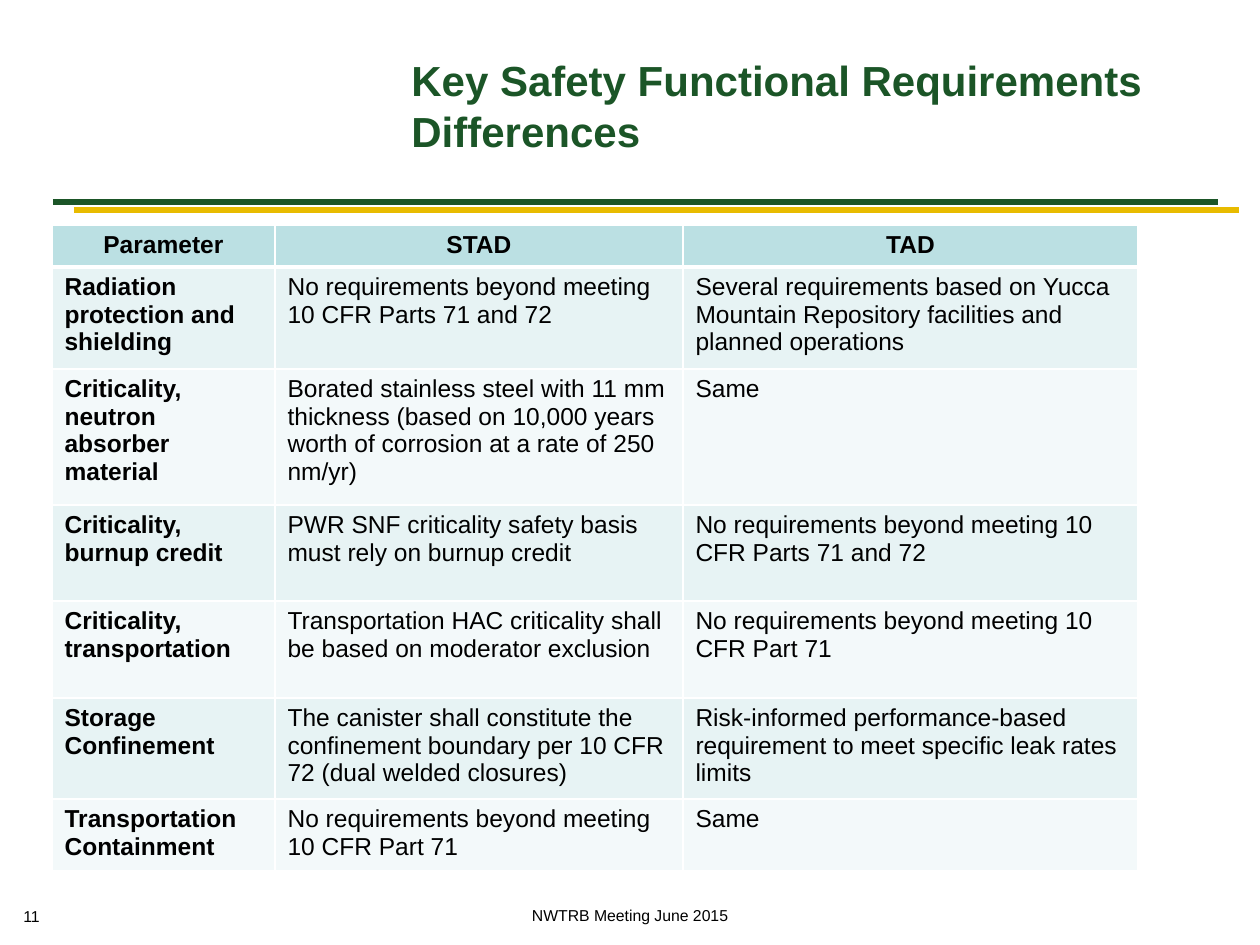
from lxml import etree
from pptx import Presentation, util as u
from pptx.dml.color import RGBColor
from pptx.enum import shapes, text
from pptx.oxml.ns import qn

PX = 914400 / 126  # EMU per px

GREEN = RGBColor(0x1B, 0x55, 0x27)
GOLD = RGBColor(0xE8, 0xBB, 0x00)
BLACK = RGBColor(0, 0, 0)
WHITE = RGBColor(0xFF, 0xFF, 0xFF)
HEADER = RGBColor(0xBB, 0xE0, 0xE3)
BANDS = [RGBColor(0xE7, 0xF3, 0xF4), RGBColor(0xF3, 0xF9, 0xFA)]

COLS = [223, 408, 455]
ROWS = [40, 102, 136, 96, 97, 97, 72]
CELLS = [
    ["Parameter", "STAD", "TAD"],
    ["Radiation protection and shielding",
     "No requirements beyond meeting 10 CFR Parts 71 and 72",
     "Several requirements based on Yucca Mountain Repository facilities "
     "and planned operations"],
    ["Criticality, neutron absorber material",
     "Borated stainless steel with 11 mm thickness (based on 10,000 years "
     "worth of corrosion at a rate of 250 nm/yr)",
     "Same"],
    ["Criticality, burnup credit",
     "PWR SNF criticality safety basis must rely on burnup credit",
     "No requirements beyond meeting 10 CFR Parts 71 and 72"],
    ["Criticality,\ntransportation",
     "Transportation HAC criticality shall be based on moderator exclusion",
     "No requirements beyond meeting 10 CFR Part 71"],
    ["Storage Confinement",
     "The canister shall constitute the confinement boundary per 10 CFR 72 "
     "(dual welded closures)",
     "Risk-informed performance-based requirement to meet specific leak "
     "rates limits"],
    ["Transportation Containment",
     "No requirements beyond meeting 10 CFR Part 71",
     "Same"],
]


def px(n):
    return u.Emu(round(n * PX))


def write(tf, words, size, color=BLACK, bold=False, align=text.PP_ALIGN.LEFT):
    tf.text = words
    font = {"name": "Arial", "size": u.Pt(size), "bold": bold}
    for p in tf.paragraphs:
        p.alignment = align
        for r in p.runs:
            for key, value in font.items():
                setattr(r.font, key, value)
            r.font.color.rgb = color


def add_text(s, box, words, size, wrap=True, anchor=text.MSO_ANCHOR.TOP, **style):
    tf = s.shapes.add_textbox(*map(px, box)).text_frame
    for key, value in {"word_wrap": wrap, "vertical_anchor": anchor}.items():
        setattr(tf, key, value)
    write(tf, words, size, **style)


def add_rules(s, box):
    """Two offset lines under the title."""
    x, y, w, h = box
    length = w - 21
    for dx, dy, color in [(0, 0, GREEN), (21, h, GOLD)]:
        ends = (x + dx, y + dy, x + dx + length, y + dy)
        line = s.shapes.add_connector(shapes.MSO_CONNECTOR.STRAIGHT, *map(px, ends))
        line.line.color.rgb = color
        line.line.width = u.Pt(3)
        etree.SubElement(line._element.spPr, qn("a:effectLst"))


def set_borders(cell, widths):
    tc_pr = cell._tc.get_or_add_tcPr()
    for i, (side, width) in enumerate(widths.items()):
        ln = etree.Element(qn("a:ln" + side), w=str(u.Pt(width)))
        fill = etree.SubElement(ln, qn("a:solidFill"))
        etree.SubElement(fill, qn("a:srgbClr"), val=str(WHITE))
        tc_pr.insert(i, ln)


def add_requirements(s, box):
    """Comparison table with a header row and banded body rows."""
    t = s.shapes.add_table(len(ROWS), len(COLS), *map(px, box)).table
    for col, w in zip(t.columns, COLS):
        col.width = px(w)
    for i, (row, h) in enumerate(zip(t.rows, ROWS)):
        row.height = px(h)
        for j, cell in enumerate(row.cells):
            head = i == 0
            align = text.PP_ALIGN.CENTER if head else text.PP_ALIGN.LEFT
            write(cell.text_frame, CELLS[i][j], 14, bold=head or j == 0, align=align)
            cell.fill.solid()
            cell.fill.fore_color.rgb = HEADER if head else BANDS[(i - 1) % 2]
            set_borders(cell, {"L": 1, "R": 1, "T": 3 if i == 1 else 1,
                               "B": 3 if head else 1})


def add_footer(s, box):
    """Page number at the left and meeting name in the centre."""
    x, y, w, h = box
    add_text(s, (x, y + 1, 45, 32), "11", 9, wrap=False)
    add_text(s, (x + (w - 462) // 2, y, 462, h), "NWTRB Meeting June 2015", 9,
             align=text.PP_ALIGN.CENTER)


def main():
    prs = Presentation()
    prs.slide_width, prs.slide_height = px(1260), px(945)
    s = prs.slides.add_slide(prs.slide_layouts[6])
    add_rules(s, (53, 202, 1186, 8))
    add_text(s, (399, 21, 798, 168), "Key Safety Functional Requirements Differences",
             24, anchor=text.MSO_ANCHOR.MIDDLE, color=GREEN, bold=True)
    add_requirements(s, (52, 225, sum(COLS), sum(ROWS)))
    add_footer(s, (11, 900, 1238, 45))
    prs.save("out.pptx")


if __name__ == "__main__":
    main()
